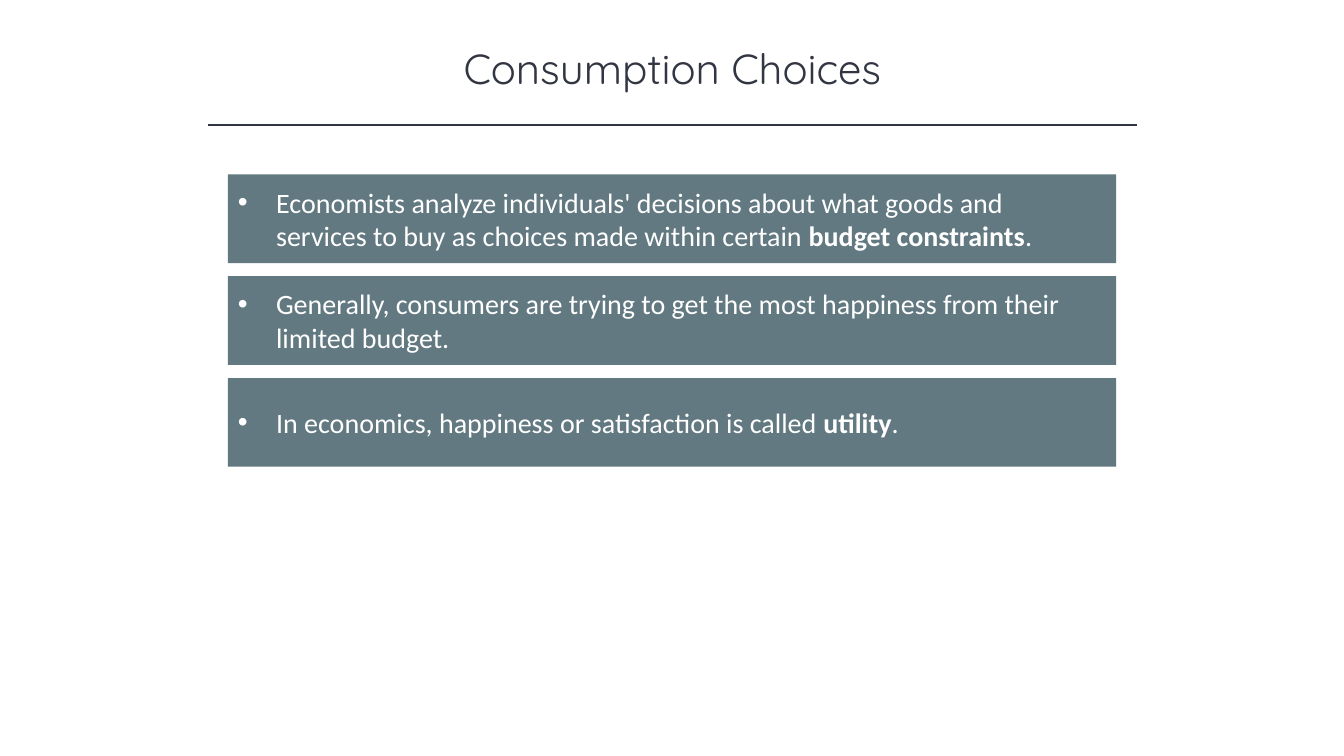
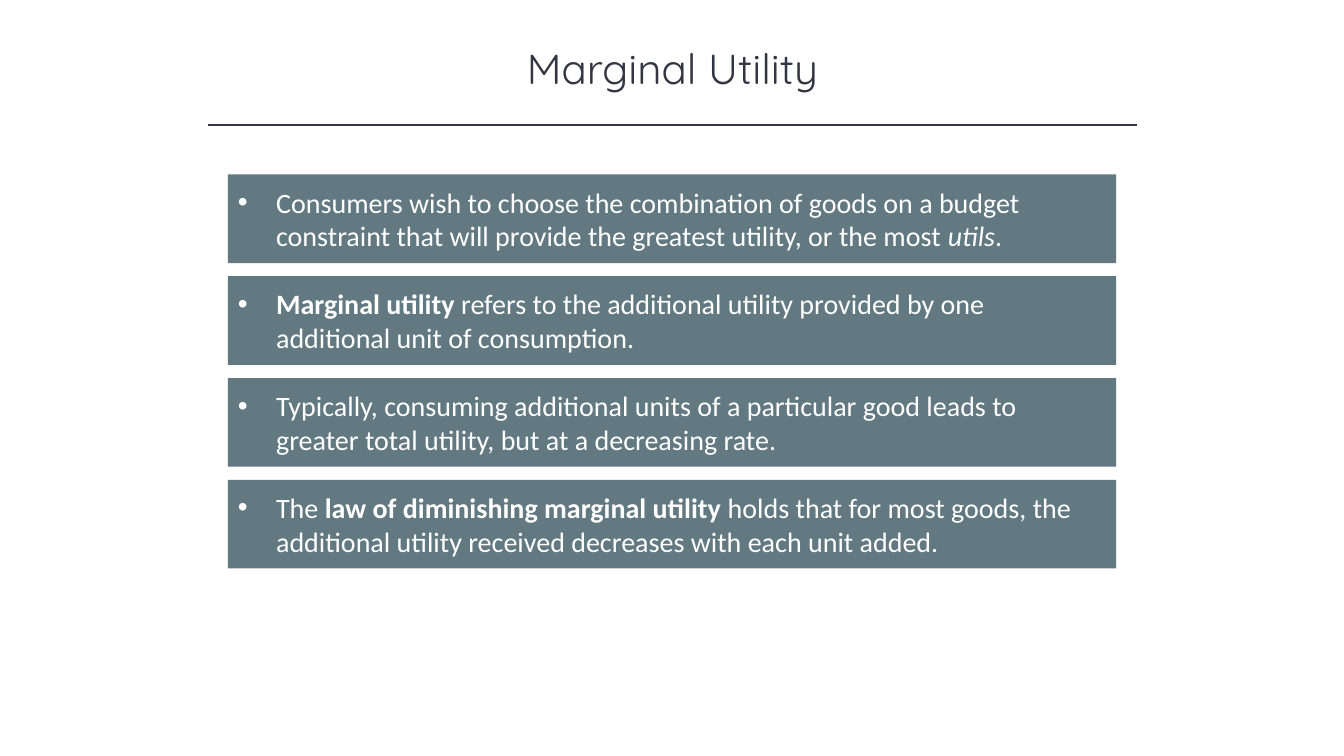
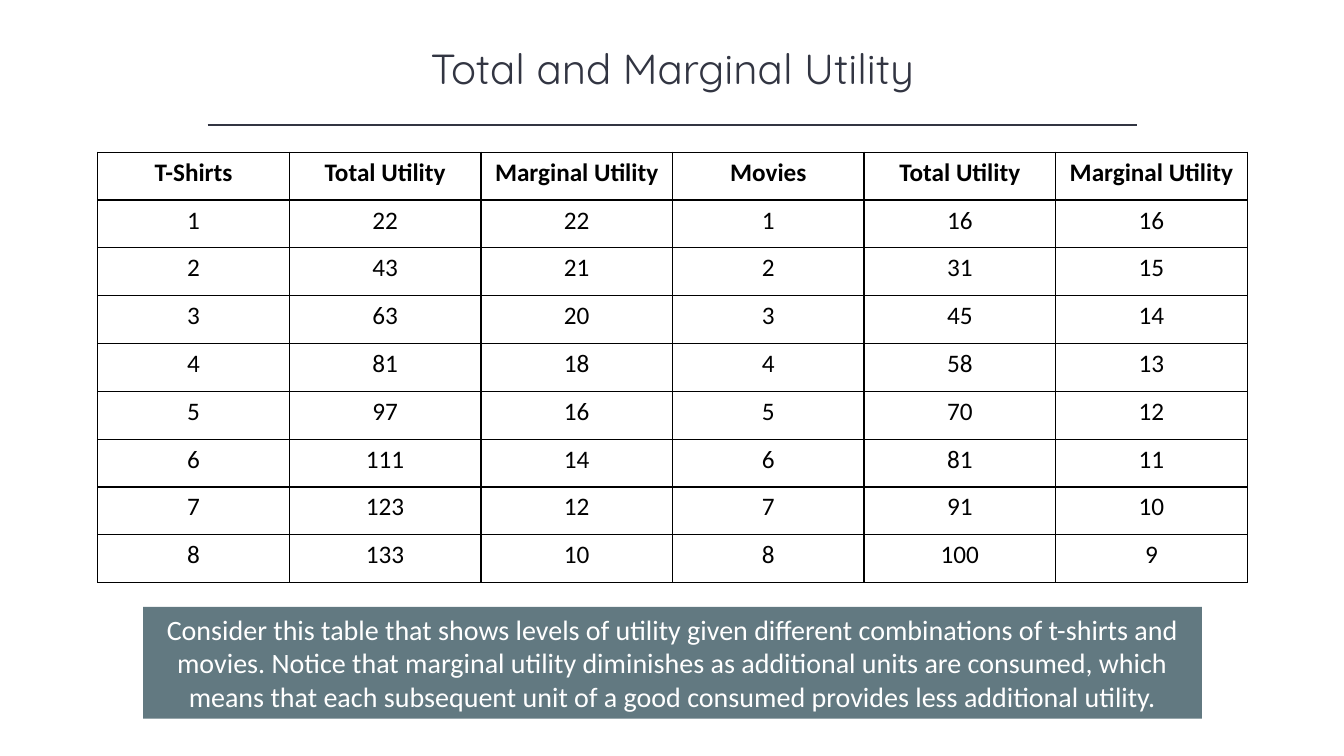
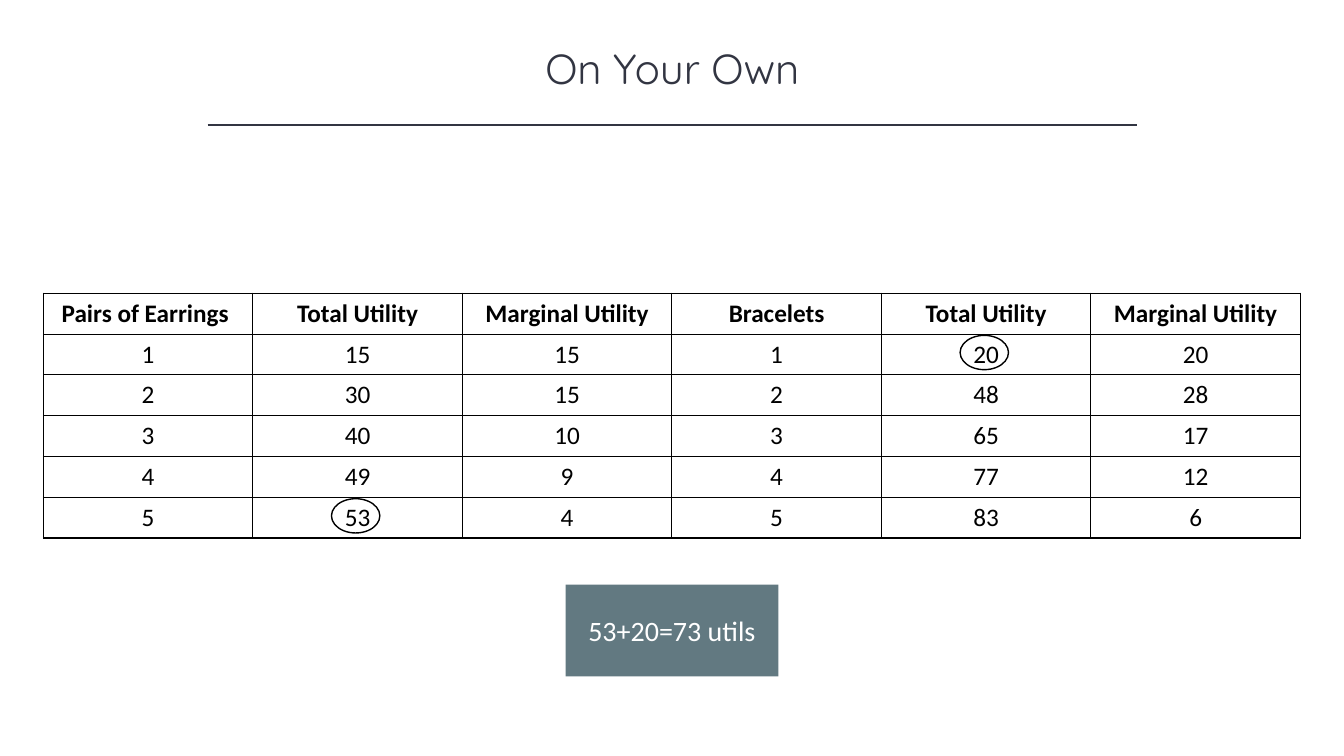
"""Build a four-slide lesson on consumption choices and utility."""
import dataclasses

import lxml.etree
import pptx
import pptx.dml.color
import pptx.enum.shapes
import pptx.enum.text
import pptx.oxml.ns
import pptx.util

Inches = pptx.util.Inches
Pt = pptx.util.Pt
Shape = pptx.enum.shapes.MSO_SHAPE
Align = pptx.enum.text.PP_ALIGN
Anchor = pptx.enum.text.MSO_ANCHOR
qn = pptx.oxml.ns.qn


@dataclasses.dataclass(frozen=True)
class Theme:
    """Colours, fonts and type sizes shared by every slide."""

    ink: str = "323542"
    panel: str = "627981"
    white: str = "FFFFFF"
    black: str = "000000"
    title_font: str = "Quicksand"
    body_font: str = "Calibri"
    title_size: int = 30
    body_size: int = 20
    table_size: int = 18
    line_width: int = 1


@dataclasses.dataclass(frozen=True)
class Box:
    """A rectangle measured in inches."""

    left: float
    top: float
    width: float
    height: float

    def lengths(self):
        """Return the four sides as slide lengths."""
        return [Inches(side) for side in dataclasses.astuple(self)]


THEME = Theme()
TITLE_BOX = Box(1.67, 0.37, 10, 0.61)
RULE_BOX = Box(2.06, 1.24, 9.22, 0)
BAND_BOX = Box(2.26, 1.73, 8.81, 0.88)
BAND_STEP = 1.01

CHOICES = [
    [("Economists analyze individuals' decisions about what goods and services to buy "
      "as choices made within certain ", ""), ("budget constraints", "bold"), (".", "")],
    [("Generally, consumers are trying to get the most happiness from their limited budget.", "")],
    [("In economics, happiness or satisfaction is called ", ""), ("utility", "bold"), (".", "")],
]

MARGINAL = [
    [("Consumers wish to choose the combination of goods on a budget constraint that will "
      "provide the greatest utility, or the most ", ""), ("utils", "italic"), (".", "")],
    [("Marginal utility ", "bold"),
     ("refers to the additional utility provided by one additional unit of consumption.", "")],
    [("Typically, consuming additional units of a particular good leads to greater total "
      "utility, but at a decreasing rate.", "")],
    [("The ", ""), ("law of diminishing marginal utility ", "bold"),
     ("holds that for most goods, the additional utility received decreases with each "
      "unit added.", "")],
]

SHIRTS_AND_MOVIES = [
    ("T-Shirts", "Total Utility", "Marginal Utility", "Movies", "Total Utility", "Marginal Utility"),
    (1, 22, 22, 1, 16, 16),
    (2, 43, 21, 2, 31, 15),
    (3, 63, 20, 3, 45, 14),
    (4, 81, 18, 4, 58, 13),
    (5, 97, 16, 5, 70, 12),
    (6, 111, 14, 6, 81, 11),
    (7, 123, 12, 7, 91, 10),
    (8, 133, 10, 8, 100, 9),
]
TABLE_REMARK = (
    "Consider this table that shows levels of utility given different combinations of t-shirts "
    "and movies. Notice that marginal utility diminishes as additional units are consumed, which "
    "means that each subsequent unit of a good consumed provides less additional utility."
)

EARRINGS_AND_BRACELETS = [
    ("Pairs of Earrings ", "Total Utility", "Marginal Utility", "Bracelets", "Total Utility",
     "Marginal Utility"),
    (1, 15, 15, 1, 20, 20),
    (2, 30, 15, 2, 48, 28),
    (3, 40, 10, 3, 65, 17),
    (4, 49, 9, 4, 77, 12),
    (5, 53, 4, 5, 83, 6),
]


def color(value):
    """Turn a hex string into a colour."""
    return pptx.dml.color.RGBColor.from_string(value)


def add_span(para, text, font, size, ink, style=""):
    """Add one run of text to a paragraph."""
    span = para.add_run()
    span.text = text
    span.font.name = font
    span.font.size = Pt(size)
    span.font.color.rgb = color(ink)
    span.font.bold = style == "bold"
    span.font.italic = style == "italic"


def add_title(page, box, text):
    """Place the centred slide title."""
    title = page.shapes.add_textbox(*box.lengths())
    title.text_frame.word_wrap = True
    para = title.text_frame.paragraphs[0]
    para.alignment = Align.CENTER
    add_span(para, text, THEME.title_font, THEME.title_size, THEME.ink)


def add_rule(page, box):
    """Draw the thin line under the title."""
    left, top, width, height = box.lengths()
    rule = page.shapes.add_connector(
        pptx.enum.shapes.MSO_CONNECTOR.STRAIGHT, left, top, left + width, top + height)
    rule.line.color.rgb = color(THEME.ink)
    rule.line.width = Pt(THEME.line_width)
    lxml.etree.SubElement(rule._element.spPr, qn("a:effectLst"))


def add_page(deck, title):
    """Add a blank slide with its title and rule."""
    page = deck.slides.add_slide(deck.slide_layouts[6])
    add_title(page, TITLE_BOX, title)
    add_rule(page, RULE_BOX)
    return page


def add_panel(page, box, spans, alignment=Align.CENTER):
    """Add a filled rectangle holding one paragraph, and return it."""
    panel = page.shapes.add_shape(Shape.RECTANGLE, *box.lengths())
    panel.shadow.inherit = False
    panel.fill.solid()
    panel.fill.fore_color.rgb = color(THEME.panel)
    panel.line.fill.background()
    panel.text_frame.word_wrap = True
    panel.text_frame.vertical_anchor = Anchor.MIDDLE
    para = panel.text_frame.paragraphs[0]
    para.alignment = alignment
    for text, style in spans:
        add_span(para, text, THEME.body_font, THEME.body_size, THEME.white, style)
    return panel


def add_bullet(para):
    """Give a paragraph a round bullet and a hanging indent."""
    properties = para._p.get_or_add_pPr()
    indent = Inches(0.38)
    properties.set("marL", str(indent))
    properties.set("indent", str(-indent))
    lxml.etree.SubElement(properties, qn("a:buFont"), typeface="Arial")
    lxml.etree.SubElement(properties, qn("a:buChar"), char="•")


def add_bands(page, box, points):
    """Stack one bulleted panel for each point, starting at the box."""
    for index, spans in enumerate(points):
        band_box = dataclasses.replace(box, top=box.top + index * BAND_STEP)
        band = add_panel(page, band_box, spans, Align.LEFT)
        band.text_frame.margin_right = Inches(0.37)
        add_bullet(band.text_frame.paragraphs[0])


def add_borders(cell):
    """Draw a solid line on all four sides of a cell."""
    properties = cell._tc.get_or_add_tcPr()
    for side in ("a:lnL", "a:lnR", "a:lnT", "a:lnB"):
        line = lxml.etree.SubElement(properties, qn(side), w=str(Pt(THEME.line_width)))
        fill = lxml.etree.SubElement(line, qn("a:solidFill"))
        lxml.etree.SubElement(fill, qn("a:srgbClr"), val=THEME.black)


def add_grid(page, box, rows):
    """Fill the box with a ruled table whose first row is bold."""
    table = page.shapes.add_table(len(rows), len(rows[0]), *box.lengths()).table
    table.first_row = False
    table.horz_banding = False
    for column in table.columns:
        column.width = Inches(box.width / len(rows[0]))
    for row_index, values in enumerate(rows):
        table.rows[row_index].height = Inches(box.height / len(rows))
        for column_index, value in enumerate(values):
            cell = table.cell(row_index, column_index)
            add_borders(cell)
            cell.fill.solid()
            cell.fill.fore_color.rgb = color(THEME.white)
            para = cell.text_frame.paragraphs[0]
            para.alignment = Align.CENTER
            add_span(para, str(value), THEME.body_font, THEME.table_size, THEME.black,
                     "" if row_index else "bold")


def add_ring(page, box, rows, row_index, column_index):
    """Circle one cell of the table that fills the box."""
    width, height, nudge = 0.48, 0.34, 0.02
    center = box.left + (column_index + 0.5) * box.width / len(rows[0]) - nudge
    middle = box.top + (row_index + 0.5) * box.height / len(rows) - nudge
    ring_box = Box(center - width / 2, middle - height / 2, width, height)
    ring = page.shapes.add_shape(Shape.OVAL, *ring_box.lengths())
    ring.shadow.inherit = False
    ring.fill.background()
    ring.line.color.rgb = color(THEME.black)
    ring.line.width = Pt(THEME.line_width)


def build_points(deck, title, points):
    """Build a slide of stacked points."""
    add_bands(add_page(deck, title), BAND_BOX, points)


def build_table(deck, title, table_box, rows, remark_box, remark, ringed=()):
    """Build a slide with a table, a remark below it and ringed cells."""
    page = add_page(deck, title)
    add_grid(page, table_box, rows)
    add_panel(page, remark_box, [(remark, "")])
    for row_index, column_index in ringed:
        add_ring(page, table_box, rows, row_index, column_index)


def main():
    """Build and save the deck."""
    deck = pptx.Presentation()
    deck.slide_width = Inches(13.33)
    deck.slide_height = Inches(7.5)
    build_points(deck, "Consumption Choices", CHOICES)
    build_points(deck, "Marginal Utility", MARGINAL)
    build_table(deck, "Total and Marginal Utility", Box(0.97, 1.51, 11.4, 4.27),
                SHIRTS_AND_MOVIES, Box(1.42, 6.02, 10.5, 1.11), TABLE_REMARK)
    build_table(deck, "On Your Own", Box(0.43, 2.91, 12.47, 2.43),
                EARRINGS_AND_BRACELETS, Box(5.61, 5.8, 2.11, 0.91), "53+20=73 utils",
                ringed=[(5, 1), (1, 4)])
    deck.save("out.pptx")


if __name__ == "__main__":
    main()
